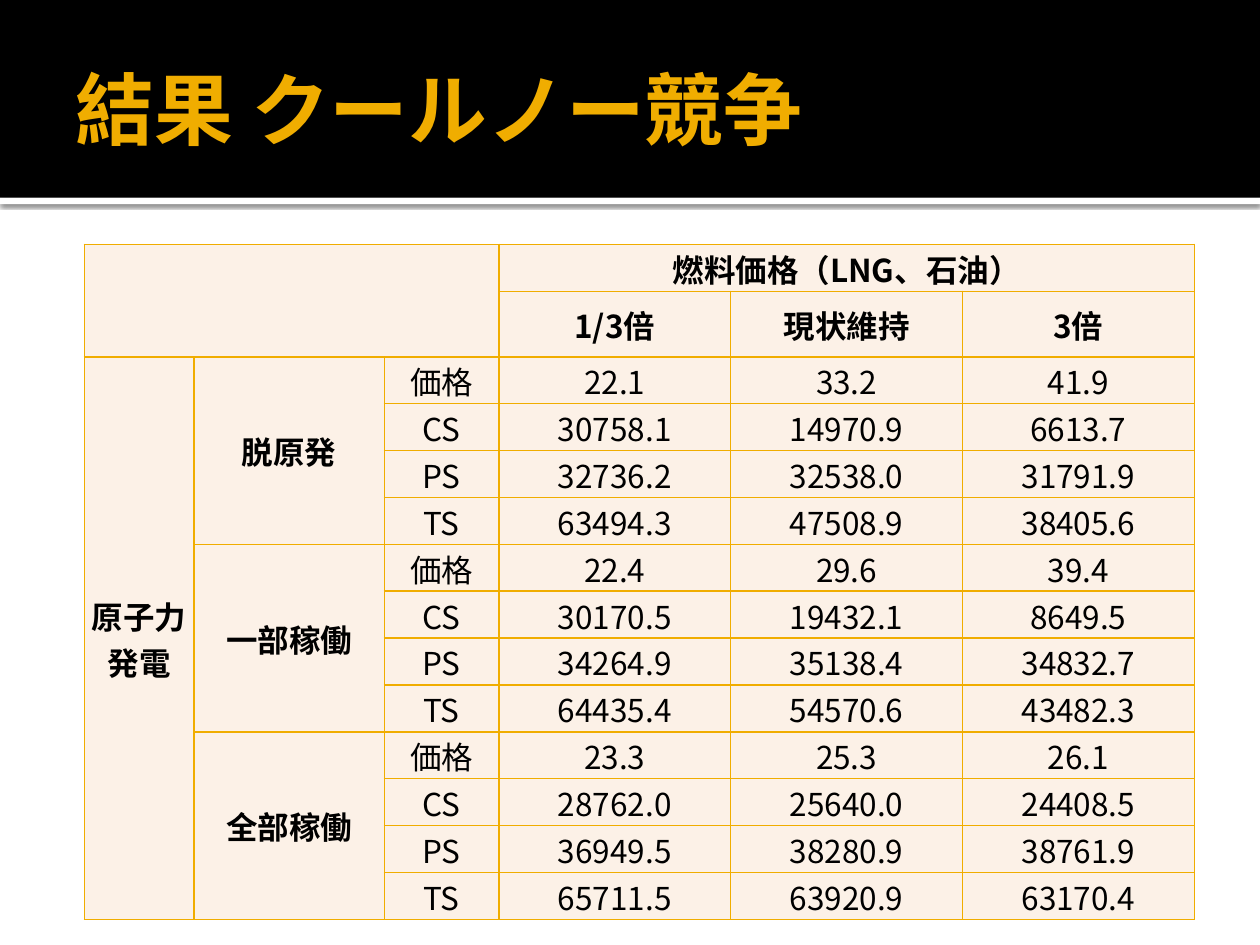
"""Build the slide with the Cournot competition results table."""
from dataclasses import dataclass

from lxml import etree
from pptx import Presentation
from pptx.dml.color import RGBColor
from pptx.enum.shapes import MSO_SHAPE
from pptx.enum.text import MSO_ANCHOR, PP_ALIGN
from pptx.oxml.ns import qn
from pptx.util import Inches, Pt

RECTANGLE = MSO_SHAPE.RECTANGLE
MIDDLE = MSO_ANCHOR.MIDDLE
LEFT, CENTER = PP_ALIGN.LEFT, PP_ALIGN.CENTER
TITLE_ONLY = 5

COLUMN_WIDTHS = [0.87, 1.51, 0.91] + [1.84] * 3
ROW_HEIGHTS = [0.35, 0.52] + [0.37] * 12
FUEL_PRICES = ["1/3倍", "現状維持", "3倍"]
MEASURES = ["価格", "CS", "PS", "TS"]
RESULTS = {
    "脱原発": [
        ["22.1", "33.2", "41.9"],
        ["30758.1", "14970.9", "6613.7"],
        ["32736.2", "32538.0", "31791.9"],
        ["63494.3", "47508.9", "38405.6"],
    ],
    "一部稼働": [
        ["22.4", "29.6", "39.4"],
        ["30170.5", "19432.1", "8649.5"],
        ["34264.9", "35138.4", "34832.7"],
        ["64435.4", "54570.6", "43482.3"],
    ],
    "全部稼働": [
        ["23.3", "25.3", "26.1"],
        ["28762.0", "25640.0", "24408.5"],
        ["36949.5", "38280.9", "38761.9"],
        ["65711.5", "63920.9", "63170.4"],
    ],
}


@dataclass(frozen=True)
class Theme:
    """Colours, fonts and type sizes."""
    accent: str = "F0AD00"
    dark: str = "000000"
    light: str = "FFFFFF"
    cell: str = "FCF1E7"
    title_font: str = "Cabin"
    body_font: str = "Noto Sans CJK JP"
    title_size: int = 45
    body_size: int = 18
    border: float = 1


class SlideBuilder:
    """Draw styled elements on the current slide."""

    def __init__(self, slide, theme):
        self.slide = slide
        self.theme = theme

    def format_text(self, frame, font, size, color, bold, align):
        """Format every paragraph and run of a text frame."""
        for para in frame.paragraphs:
            para.alignment = align
            for span in para.runs:
                span.font.name = font
                span.font.size = Pt(size)
                span.font.bold = bold
                span.font.color.rgb = RGBColor.from_string(color)
                east_asian = etree.SubElement(span.font._element, qn("a:ea"))
                east_asian.set("typeface", self.theme.body_font)

    def band(self, top, height, color):
        """Add a full-width band without a line and return it."""
        box = self.slide.shapes.add_shape(
            RECTANGLE, 0, Inches(top), Inches(10), Inches(height))
        box.shadow.inherit = False
        box.fill.solid()
        box.fill.fore_color.rgb = RGBColor.from_string(color)
        box.line.fill.background()
        return box

    def drop_shadow(self, box):
        """Give a shape a soft shadow below it."""
        effects = box._element.spPr.find(qn("a:effectLst"))
        shadow = etree.SubElement(
            effects, qn("a:outerShdw"), blurRad=str(Pt(2.5)),
            dist=str(Pt(0.8)), dir="5400000", algn="t", rotWithShape="0")
        color = etree.SubElement(shadow, qn("a:srgbClr"), val=self.theme.dark)
        etree.SubElement(color, qn("a:alpha"), val="60000")

    def title(self, text):
        """Place the title above the bands and format it."""
        box = self.slide.shapes.title
        self.slide.shapes._spTree.append(box._element)
        box.left, box.top = Inches(0.5), Inches(0.17)
        box.width, box.height = Inches(9), Inches(1.37)
        frame = box.text_frame
        frame.text = text
        frame.vertical_anchor = MIDDLE
        frame.margin_left = Inches(0.1)
        frame.margin_right = frame.margin_top = frame.margin_bottom = Inches(0.05)
        self.format_text(frame, self.theme.title_font, self.theme.title_size,
                         self.theme.accent, True, LEFT)

    def table(self, left, top, widths, heights):
        """Add a table whose cells all have the same fill and borders."""
        frame = self.slide.shapes.add_table(
            len(heights), len(widths), Inches(left), Inches(top),
            Inches(sum(widths)), Inches(sum(heights)))
        table = frame.table
        for column, width in zip(table.columns, widths):
            column.width = Inches(width)
        for row, height in zip(table.rows, heights):
            row.height = Inches(height)
        for cell in table.iter_cells():
            self.borders(cell)
            cell.fill.solid()
            cell.fill.fore_color.rgb = RGBColor.from_string(self.theme.cell)
            cell.margin_left = cell.margin_right = cell.margin_top = Inches(0.01)
            cell.margin_bottom = 0
            cell.vertical_anchor = MIDDLE
        return table

    def borders(self, cell):
        """Draw all four borders of a cell."""
        properties = cell._tc.get_or_add_tcPr()
        for side in ("lnL", "lnR", "lnT", "lnB"):
            line = etree.SubElement(properties, qn(f"a:{side}"),
                                    w=str(Pt(self.theme.border)))
            fill = etree.SubElement(line, qn("a:solidFill"))
            etree.SubElement(fill, qn("a:srgbClr"), val=self.theme.accent)

    def cell_text(self, cell, text, bold=False):
        """Write centred text in a cell."""
        cell.text_frame.text = text
        self.format_text(cell.text_frame, self.theme.body_font,
                         self.theme.body_size, self.theme.dark, bold, CENTER)


def fill_results(builder, table):
    """Merge the heading cells and write the headings and results."""
    table.cell(0, 0).merge(table.cell(1, 2))
    table.cell(0, 3).merge(table.cell(0, 5))
    table.cell(2, 0).merge(table.cell(13, 0))
    builder.cell_text(table.cell(0, 3), "燃料価格（LNG、石油）", bold=True)
    for column, price in enumerate(FUEL_PRICES, start=3):
        builder.cell_text(table.cell(1, column), price, bold=True)

    nuclear = table.cell(2, 0)
    builder.cell_text(nuclear, "原子力発電", bold=True)
    nuclear._tc.get_or_add_tcPr().set("vert", "eaVert")

    for group, (scenario, rows) in enumerate(RESULTS.items()):
        first = 2 + group * len(MEASURES)
        table.cell(first, 1).merge(table.cell(first + len(MEASURES) - 1, 1))
        builder.cell_text(table.cell(first, 1), scenario, bold=True)
        for row, (measure, values) in enumerate(zip(MEASURES, rows), first):
            for column, text in enumerate([measure, *values], start=2):
                builder.cell_text(table.cell(row, column), text)


def main():
    """Create and save the deck."""
    deck = Presentation()
    deck.slide_width, deck.slide_height = Inches(10), Inches(7.5)
    page = deck.slides.add_slide(deck.slide_layouts[TITLE_ONLY])
    theme = Theme()
    builder = SlideBuilder(page, theme)
    builder.drop_shadow(builder.band(1.57, 0.05, theme.light))
    builder.band(0, 1.57, theme.dark)
    builder.title("結果 クールノー競争")
    fill_results(builder, builder.table(0.67, 1.94, COLUMN_WIDTHS, ROW_HEIGHTS))
    deck.save("out.pptx")


if __name__ == "__main__":
    main()
